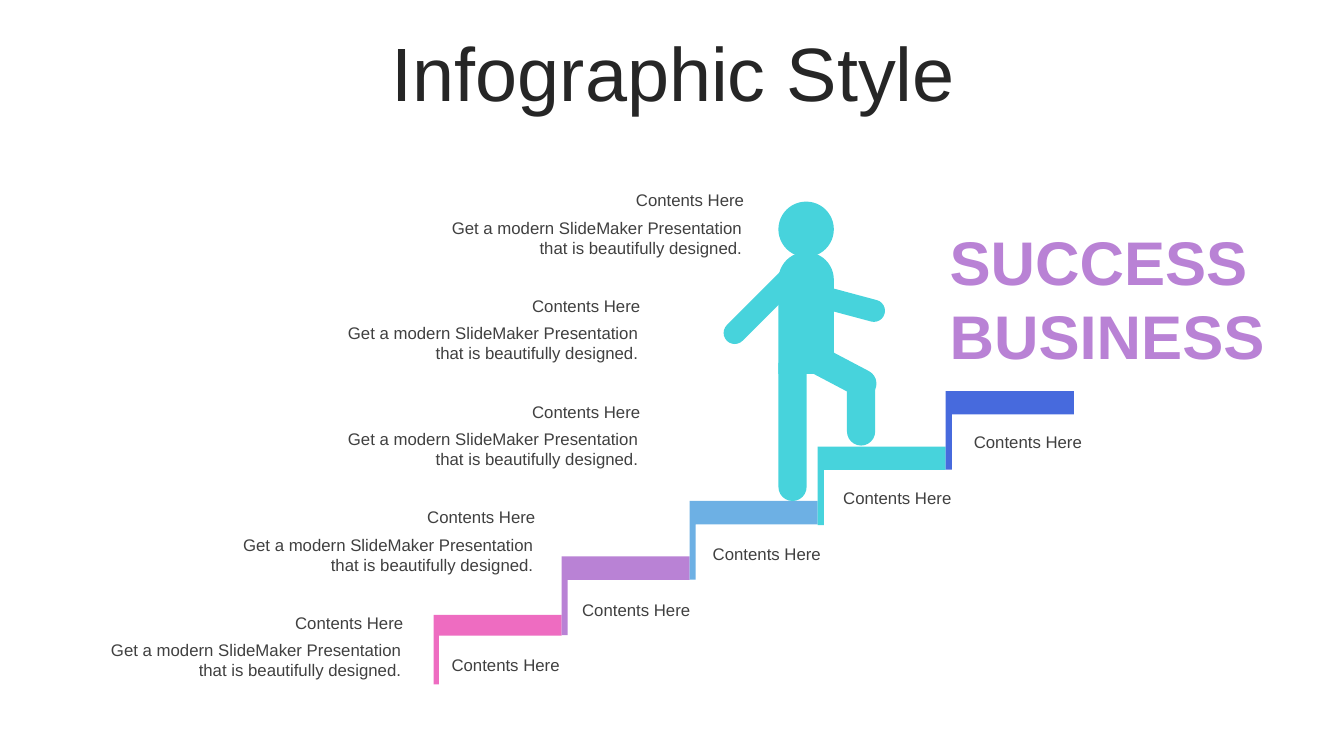
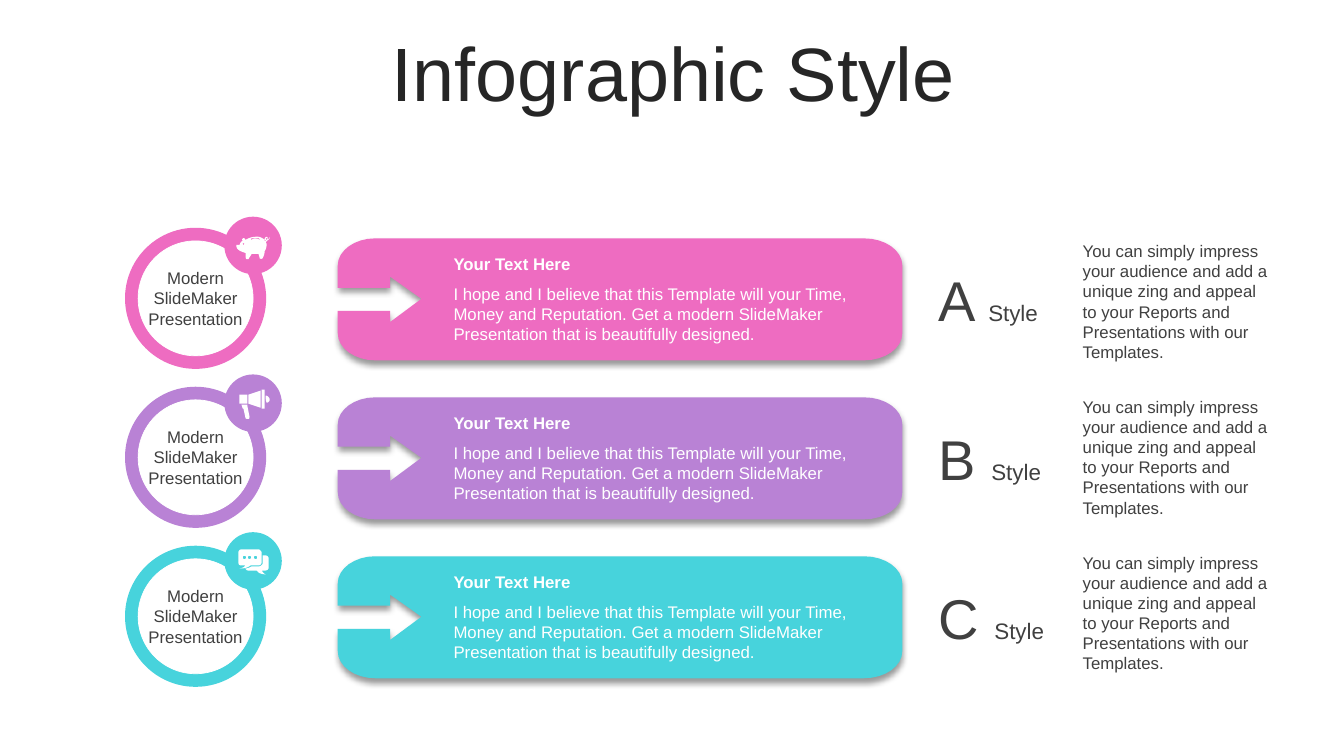
import math
from pptx import Presentation
from pptx import util as u
from pptx.dml.color import RGBColor
from pptx.enum import shapes, text
from pptx.oxml import parse_xml
from pptx.oxml.ns import nsdecls, qn

WIDTH, HEIGHT = u.Inches(13.33), u.Inches(7.5)
ROWS = 75
CELL = HEIGHT / ROWS
COLUMNS = WIDTH / CELL
FONT = "Arial"
COLORS = {
    "pink": "EE6CC1", "purple": "B982D5", "sky": "6DB0E4", "teal": "47D3DC",
    "blue": "476ADD", "white": "FFFFFF", "title": "262626", "body": "404040",
}
SHAPE = shapes.MSO_SHAPE
ALIGN = text.PP_ALIGN
ANCHOR = text.MSO_ANCHOR

STEP_HEADING = "Contents Here"
STEP_DETAIL = "Get a modern SlideMaker Presentation that is beautifully designed."
BADGE_LABEL = "Modern SlideMaker Presentation"
PANEL_HEADING = "Your Text Here"
PANEL_DETAIL = ("I hope and I believe that this Template will your Time, Money and "
                "Reputation. Get a modern SlideMaker Presentation that is "
                "beautifully designed.")
STYLE_DETAIL = ("You can simply impress your audience and add a unique zing and appeal "
                "to your Reports and Presentations with our Templates.")


def dot(x, y, radius):
    angles = (math.tau * n / 12 for n in range(12))
    return [(x + radius * math.cos(a), y + radius * math.sin(a)) for a in angles]


PANEL = [[
    (3.7, 0), (52.2, 0), (54.3, 0, 56, 1.2, 56, 2.7), (56, 9.4),
    (56, 10.9, 54.3, 12.1, 52.2, 12.1), (3.7, 12.1), (1.7, 12.1, 0, 10.9, 0, 9.4),
    (0, 7.2), (5.2, 7.2), (5.2, 8.3), (8.3, 6), (5.2, 3.8), (5.2, 4.9), (0, 4.9),
    (0, 2.7), (0, 1.2, 1.7, 0, 3.7, 0),
]]
PIG = [
    [(18, 0), (22, -1, 26, 1, 28, 3), (28, 4), (29, 4, 29, 4, 29, 3),
     (28, 3, 28, 3, 28, 2), (28, 1, 29, 0, 30, 0), (31, 0, 31, 1, 31, 2),
     (31, 2, 32, 3, 33, 0), (33, 2, 32, 3, 30, 4), (30, 4, 30, 5, 29, 5), (30, 7),
     (30, 10, 29, 13, 28, 14), (28, 17, 27, 19, 26, 21), (26, 22, 23, 22, 23, 21),
     (23, 20, 22, 18, 22, 17), (20, 17, 17, 17, 15, 17), (14, 19, 13, 20, 12, 22),
     (10, 22), (9, 22, 9, 18, 9, 16), (6, 15, -1, 13, 0, 8), (0, 8, 2, 8, 3, 8),
     (4, 6, 4, 5, 6, 4), (6, 3, 5, 2, 6, 2), (8, 0, 8, 2, 9, 3), (12, 1, 16, 0, 18, 0)],
    [(19, 1), (17, 1, 16, 1, 14, 2), (15, 3), (17, 1, 20, 1, 23, 3), (23, 2),
     (22, 1, 20, 1, 19, 1)],
    dot(7, 7, 0.8), dot(30, 2, 0.8),
]
MEGAPHONE = [
    [(8, 15), (8, 17), (10, 27), (10, 28, 10, 29, 9, 29), (8, 29),
     (7, 29, 6, 29, 6, 28), (4, 19), (3, 19, 3, 18, 3, 18), (2, 15)],
    [(26, 6), (28, 6, 30, 8, 30, 10), (30, 12, 28, 13, 27, 13), (26, 11, 26, 9, 26, 6)],
    [(0, 5), (8, 5), (8, 14), (0, 14)],
    [(21, 1), (21, 18), (9, 14), (9, 5)],
    [(22, 0), (25, 0), (25, 19), (22, 19)],
]
CHAT = [
    [(3, 0), (20, 0), (21, 0, 23, 2, 23, 3), (23, 13), (23, 15, 21, 16, 20, 16),
     (12, 16), (9, 18, 7, 19, 1, 19), (5, 18, 5, 18, 7, 16), (3, 16),
     (1, 16, 0, 15, 0, 13), (0, 3), (0, 2, 1, 0, 3, 0)],
    [(24, 6), (27, 6), (28, 6, 30, 7, 30, 9), (30, 18), (30, 20, 28, 21, 27, 21),
     (23, 21), (24, 22, 24, 23, 27, 25), (21, 24, 21, 24, 18, 21), (10, 21),
     (9, 21, 8, 21, 7, 19), (9, 19, 11, 18, 13, 17), (20, 17), (22, 17, 24, 15, 24, 14)],
    dot(6, 8, 1.7), dot(11, 8, 1.7), dot(17, 8, 1.7),
]


def cells(*lengths):
    return [round(length * CELL) for length in lengths]


def rgb(color):
    return RGBColor.from_string(COLORS[color])


def paint(shape, color):
    shape.fill.solid()
    shape.fill.fore_color.rgb = rgb(color)
    shape.line.fill.background()
    shape.shadow.inherit = False
    return shape


def add_part(slide, kind, box, color, turn=0, bends=()):
    part = slide.shapes.add_shape(kind, *cells(*box))
    part.rotation = turn
    for index, bend in enumerate(bends):
        part.adjustments[index] = bend
    return paint(part, color)


def flatten(contour):
    points = [contour[0]]
    for target in contour[1:]:
        if len(target) == 2:
            points.append(target)
            continue
        corners = [points[-1], target[:2], target[2:4], target[4:]]
        for t in (n / 8 for n in range(1, 9)):
            weights = [math.comb(3, k) * t ** k * (1 - t) ** (3 - k) for k in range(4)]
            points.append(tuple(sum(w * c[axis] for w, c in zip(weights, corners))
                                for axis in (0, 1)))
    return points


def add_outline(slide, contours, left, top, color, unit=1):
    traced = [[cells(left + x * unit, top + y * unit) for x, y in flatten(contour)]
              for contour in contours]
    builder = slide.shapes.build_freeform(*traced[0][0])
    for number, points in enumerate(traced):
        if number:
            builder.move_to(*points[0])
        builder.add_line_segments(points[1:], close=True)
    return paint(builder.convert_to_shape(), color)


def drop_shadow(shape):
    effects = shape._element.spPr.find(qn("a:effectLst"))
    effects.append(parse_xml(
        f'<a:outerShdw {nsdecls("a")} blurRad="{u.Pt(4)}" dist="{u.Pt(3)}" '
        'dir="5400000" algn="t" rotWithShape="0"><a:srgbClr val="000000">'
        '<a:alpha val="40000"/></a:srgbClr></a:outerShdw>'))


def add_text(slide, box, words, size=12, color="body", bold=False,
             align=ALIGN.LEFT, anchor=ANCHOR.TOP):
    frame = slide.shapes.add_textbox(*cells(*box)).text_frame
    frame.word_wrap = True
    frame.vertical_anchor = anchor
    paragraph = frame.paragraphs[0]
    paragraph.text = words
    paragraph.alignment = align
    font = paragraph.font
    font.name, font.size, font.bold = FONT, u.Pt(size), bold
    font.color.rgb = rgb(color)
    return paragraph


def add_titled_slide(deck, title):
    slide = deck.slides.add_slide(deck.slide_layouts[6])
    heading = add_text(slide, (3.5, 3.7, COLUMNS - 6.7, 7.9), title, 54, "title",
                       align=ALIGN.CENTER, anchor=ANCHOR.MIDDLE)
    heading.line_spacing = 0.9
    return slide


def add_step(slide, left, top, depth, color):
    tread = 12.7
    box = (left + (tread - depth) / 2, top + (depth - tread) / 2, depth, tread)
    add_part(slide, SHAPE.CORNER, box, color, 90, (0.077, 0.297))


def add_climber(slide, color):
    add_part(slide, SHAPE.OVAL, (77.2, 20, 5.5, 5.5), color)
    limbs = [
        ((77.2, 25, 5.5, 12.1), 0), ((77.2, 36, 2.8, 13.7), 180),
        ((84, 37.5, 2.8, 6.7), 180), ((82.4, 33.8, 2.8, 6.7), 117.8),
        ((83.4, 26.9, 2.2, 6.7), 105), ((74.6, 25.1, 2.2, 10.2), 225),
    ]
    for box, turn in limbs:
        add_part(slide, SHAPE.ROUND_2_SAME_RECTANGLE, box, color, turn, (0.5, 0))


def add_note(slide, right, top):
    width = 33.5
    add_text(slide, (right - width, top, width, 3), STEP_HEADING, align=ALIGN.RIGHT)
    add_text(slide, (right - width - 0.2, top + 2.7, width, 5), STEP_DETAIL,
             align=ALIGN.RIGHT)


def build_stairs(deck):
    slide = add_titled_slide(deck, "Infographic Style")
    stairs = [("pink", 61, 6.9, 41), ("purple", 55.2, 7.8, 54.1),
              ("sky", 49.7, 7.8, 64.5), ("teal", 44.3, 7.8, 64.5),
              ("blue", 38.8, 7.8, 74.8)]
    for number, (color, top, depth, note_right) in enumerate(stairs):
        add_step(slide, 43 + 12.7 * number, top, depth, color)
        add_text(slide, (43.8 + 12.95 * number, 64.5 - 5.53 * number, 13.9, 3),
                 STEP_HEADING)
        add_note(slide, note_right, 60.3 - 10.48 * number)
    add_climber(slide, "teal")
    add_text(slide, (93.2, 21.7, 33.5, 15.8), "SUCCESS BUSINESS", 44, "purple", True,
             ALIGN.JUSTIFY)


def add_ring(slide, top, color):
    add_part(slide, SHAPE.OVAL, (12.4, top, 14, 14), color)
    hole = add_part(slide, SHAPE.OVAL, (13.7, top + 1.3, 11.4, 11.4), "white")
    hole.line.color.rgb = rgb("white")
    hole.line.width = u.Pt(0.5)
    add_text(slide, (13.7, top + 3.5, 11.4, 7.1), BADGE_LABEL, align=ALIGN.CENTER)


def add_badge(slide, top, color, icon, inset_x, inset_y):
    left = 22.25
    add_part(slide, SHAPE.OVAL, (left, top, 5.7, 5.7), color)
    add_outline(slide, icon, left + inset_x, top + inset_y, "white", 0.1)


def add_panel(slide, top, color):
    drop_shadow(add_outline(slide, PANEL, 33.5, top, color))
    add_text(slide, (44, top + 1, 42.3, 3), PANEL_HEADING, color="white", bold=True)
    add_text(slide, (44, top + 4, 42.3, 7.1), PANEL_DETAIL, color="white")


def add_style_letter(slide, top, letter):
    label = add_text(slide, (92.1, top, 15.7, 7.7), f"{letter} ", 40,
                     anchor=ANCHOR.BOTTOM)
    style = label.add_run()
    style.text = "Style"
    style.font.size = u.Pt(16)


def build_styles(deck):
    slide = add_titled_slide(deck, "Infographic Style")
    styles = [("A", "pink", PIG, 1.2, 2), ("B", "purple", MEGAPHONE, 1.5, 1.5),
              ("C", "teal", CHAT, 1.4, 1.7)]
    for number, (letter, color, icon, inset_x, inset_y) in enumerate(styles):
        drop = 15.77 * number
        add_ring(slide, 22.6 + drop, color)
        add_badge(slide, 21.5 + 15.65 * number, color, icon, inset_x, inset_y)
        add_panel(slide, 23.65 + drop, color)
        add_style_letter(slide, 25.8 + drop, letter)
        add_text(slide, (106.4, 23.4 + 15.45 * number, 20.7, 13.1), STYLE_DETAIL)


def main():
    deck = Presentation()
    deck.slide_width, deck.slide_height = WIDTH, HEIGHT
    build_stairs(deck)
    build_styles(deck)
    deck.save("out.pptx")


if __name__ == "__main__":
    main()
